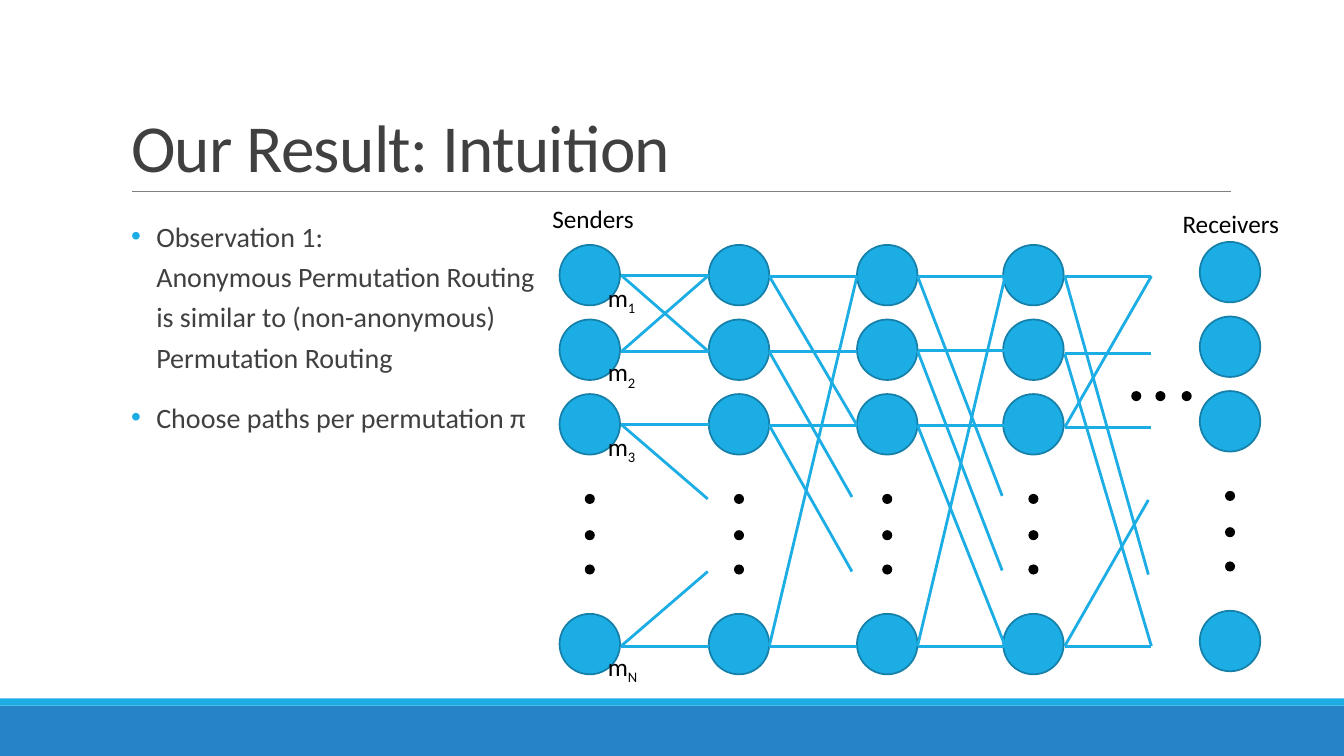
from dataclasses import dataclass

from lxml import etree
from pptx import Presentation
from pptx import util as u
from pptx.dml.color import RGBColor
from pptx.enum import shapes, text
from pptx.oxml import ns

FONT = "Calibri"
CYAN = RGBColor(0x1C, 0xAD, 0xE4)
RIM = RGBColor(0x15, 0x80, 0xA9)
BLUE = RGBColor(0x26, 0x83, 0xC6)
GRAY = RGBColor(0x80, 0x80, 0x80)
DARK = RGBColor(0x40, 0x40, 0x40)
BLACK = RGBColor(0, 0, 0)

OVAL = shapes.MSO_SHAPE.OVAL
RECT = shapes.MSO_SHAPE.RECTANGLE
NODE, DOT = 0.6, 0.1
NODES = (0, 0.74, 1.48, 3.66)
DOTS = (2.47, 2.83, 3.17)


@dataclass
class Column:
    left: float
    top: float = 2.43


@dataclass
class Stage:
    left: float
    right: float
    short: float
    rows: tuple[float, ...]
    wires: tuple[tuple[int, int], ...]


COLUMNS = (Column(11.9, 2.4), Column(5.55), Column(7.03), Column(8.5), Column(9.95))

# Rows 0-2 and 5 are nodes; rows 3 and 4 lie among the dots.
STAGES = (
    Stage(6.16, 7.03, 7.02, (2.73, 3.49, 4.21, 4.95, 5.67, 6.41),
          ((0, 1), (1, 0), (2, 3), (5, 4))),
    Stage(7.63, 8.5, 8.45, (2.74, 3.49, 4.22, 4.93, 5.67, 6.41),
          ((0, 2), (1, 3), (2, 4), (5, 0))),
    Stage(9.1, 9.97, 9.94, (2.74, 3.48, 4.22, 4.92, 5.66, 6.41),
          ((0, 3), (1, 4), (2, 5), (5, 0))),
    Stage(10.56, 11.42, 11.39, (2.74, 3.51, 4.24, 4.96, 5.7, 6.41),
          ((0, 4), (1, 5), (2, 0), (5, 3))),
)


def write(para, words: str, *, size: float = 18, color: RGBColor = BLACK,
          sub: bool = False, track: int = 0) -> None:
    for i, line in enumerate(words.split("\n")):
        if i:
            para.add_line_break()
        run = para.add_run()
        run.text = line
        run.font.name = FONT
        run.font.size = u.Pt(size)
        run.font.color.rgb = color
        props = run.font._element
        if sub:
            props.set("baseline", "-25000")
        if track:
            props.set("spc", str(track))


def frame(slide, x: float, y: float, w: float, h: float):
    box = slide.shapes.add_textbox(u.Inches(x), u.Inches(y), u.Inches(w), u.Inches(h))
    box.text_frame.word_wrap = True
    return box.text_frame


def solid(slide, kind, x: float, y: float, w: float, h: float,
          fill: RGBColor, rim: RGBColor | None = None) -> None:
    shape = slide.shapes.add_shape(kind, u.Inches(x), u.Inches(y), u.Inches(w), u.Inches(h))
    shape.shadow.inherit = False
    shape.fill.solid()
    shape.fill.fore_color.rgb = fill
    if rim is None:
        shape.line.fill.background()
    else:
        shape.line.color.rgb = rim
        shape.line.width = u.Pt(1.25)


def wire(slide, x: float, y: float, x2: float, y2: float,
         color: RGBColor = CYAN, width: float = 2) -> None:
    line = slide.shapes.add_connector(
        shapes.MSO_CONNECTOR.STRAIGHT,
        u.Inches(x), u.Inches(y), u.Inches(x2), u.Inches(y2))
    line.line.color.rgb = color
    line.line.width = u.Pt(width)
    etree.SubElement(line._element.spPr, ns.qn("a:effectLst"))


def bullet(para) -> None:
    props = para._p.get_or_add_pPr()
    props.set("marL", str(u.Inches(0.38)))
    props.set("indent", str(u.Inches(-0.25)))
    tint = etree.SubElement(props, ns.qn("a:buClr"))
    etree.SubElement(tint, ns.qn("a:srgbClr"), val=str(CYAN))
    etree.SubElement(props, ns.qn("a:buFont"), typeface="Arial")
    etree.SubElement(props, ns.qn("a:buChar"), char="•")


def header(slide) -> None:
    solid(slide, RECT, 0, 7, 13.33, 0.5, BLUE)
    solid(slide, RECT, 0, 6.93, 13.33, 0.07, CYAN)
    wire(slide, 1.31, 1.9, 12.21, 1.9, GRAY, 0.5)
    title = slide.shapes.title
    title.left, title.top = u.Inches(1.2), u.Inches(0.31)
    title.width, title.height = u.Inches(11), u.Inches(1.59)
    body = title.text_frame
    body.auto_size = text.MSO_AUTO_SIZE.NONE
    body.vertical_anchor = text.MSO_ANCHOR.BOTTOM
    para = body.paragraphs[0]
    para.alignment = text.PP_ALIGN.LEFT
    para.line_spacing = 0.85
    write(para, "Our Result: Intuition", size=48, color=DARK, track=-50)


def points(slide) -> None:
    body = frame(slide, 1.17, 2.06, 4.15, 4.4)
    body.margin_left = body.margin_right = 0
    items = (
        "Observation 1: \nAnonymous Permutation Routing\n"
        "is similar to (non-anonymous) Permutation Routing",
        "Choose paths per permutation π",
    )
    for i, item in enumerate(items):
        para = body.add_paragraph() if i else body.paragraphs[0]
        bullet(para)
        para.line_spacing = 1.2
        para.space_before = u.Pt(12 if i else 0)
        para.space_after = u.Pt(2)
        write(para, item, size=20, color=DARK)


def network(slide) -> None:
    for col in COLUMNS:
        for drop in NODES:
            solid(slide, OVAL, col.left, col.top + drop, NODE, NODE, CYAN, RIM)
        for drop in DOTS:
            solid(slide, OVAL, col.left + (NODE - DOT) / 2, col.top + drop, DOT, DOT, BLACK)
    for x in (11.22, 11.46, 11.72):
        solid(slide, OVAL, x, 3.88, DOT, DOT, BLACK)
    for stage in STAGES:
        level = tuple((row, row) for row in (0, 1, 2, 5))
        for start, end in level + stage.wires:
            right = stage.short if end in (3, 4) else stage.right
            wire(slide, stage.left, stage.rows[start], right, stage.rows[end])


def labels(slide) -> None:
    for words, x, y in (("Senders", 5.38, 1.97), ("Receivers", 11.63, 2.02)):
        write(frame(slide, x, y, 1.41, 0.4).paragraphs[0], words)
    for mark, drop in zip("123N", NODES):
        para = frame(slide, 5.93, 2.75 + drop, 0.6, 0.4).paragraphs[0]
        write(para, "m")
        write(para, mark, sub=True)


def main() -> None:
    deck = Presentation()
    deck.slide_width, deck.slide_height = u.Inches(13.33), u.Inches(7.5)
    slide = deck.slides.add_slide(deck.slide_layouts[5])
    header(slide)
    points(slide)
    network(slide)
    labels(slide)
    deck.save("out.pptx")


if __name__ == "__main__":
    main()
